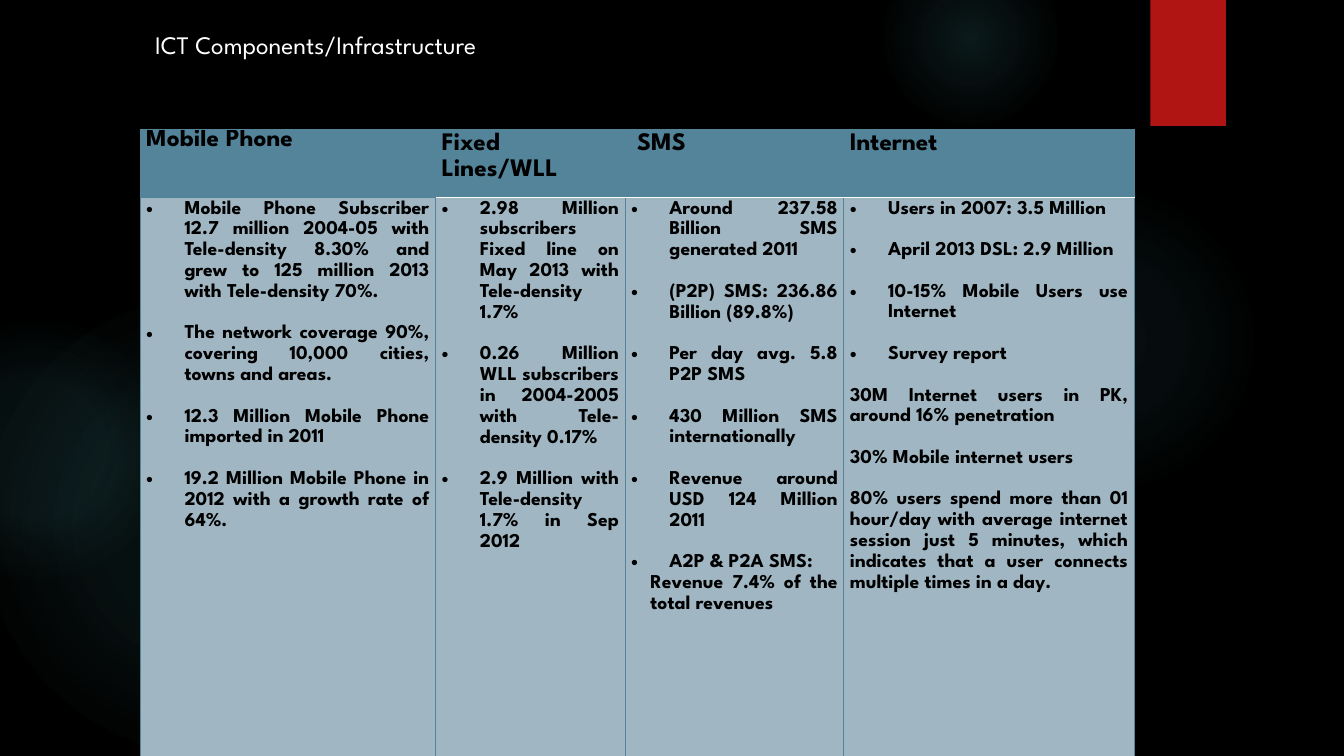
"""Builds the ICT components and infrastructure slide with its four-column table."""
from lxml.etree import SubElement
from pptx import Presentation
from pptx.dml.color import RGBColor
from pptx.enum.shapes import MSO_SHAPE
from pptx.enum.text import PP_ALIGN
from pptx.oxml import parse_xml
from pptx.oxml.ns import nsdecls, qn
from pptx.util import Inches, Pt

COLORS = {"black": "000000", "white": "FFFFFF", "red": "B01513",
          "glow": "50B9C1", "header": "54849A", "body": "A0B7C3"}
BULLET, INDENTED, PLAIN = "bullet", "indented", "plain"
GLOWS = [
    (-0.17, 2.92, 4.58, [(0, 10), (36, 8), (75, 0)]),
    (-0.92, 3.17, 2.58, [(0, 8), (36, 8), (72, 0)]),
    (9.41, 1.83, 3.08, [(0, 7), (36, 6), (69, 0)]),
    (8.75, -0.5, 1.75, [(0, 14), (36, 7), (73, 0)]),
    (9.41, 6.67, 1.08, [(0, 11), (30, 5), (67, 0)]),
]
COLUMNS = [
    ("Mobile Phone", 2.93, [
        (BULLET, "Mobile Phone Subscriber 12.7 million 2004-05 with Tele-density 8.30% "
                 "and grew to 125 million 2013 with Tele-density 70%."),
        (BULLET, "The network coverage 90%, covering 10,000 cities, towns and areas."),
        (BULLET, "12.3 Million Mobile Phone imported in 2011"),
        (BULLET, "19.2 Million Mobile Phone in 2012 with a growth rate of 64%."),
    ]),
    ("Fixed Lines/WLL", 1.88, [
        (BULLET, "2.98 Million subscribers Fixed line on May 2013 with Tele-density 1.7%"),
        (BULLET, "0.26 Million WLL subscribers in 2004-2005 with Tele-density 0.17%"),
        (BULLET, "2.9 Million with Tele-density 1.7% in Sep 2012"),
    ]),
    ("SMS", 2.17, [
        (BULLET, "Around 237.58 Billion SMS generated 2011"),
        (BULLET, "(P2P) SMS: 236.86 Billion (89.8%)"),
        (BULLET, "Per day avg. 5.8 P2P SMS"),
        (BULLET, "430 Million SMS internationally"),
        (BULLET, "Revenue around USD 124 Million 2011"),
        (BULLET, "A2P & P2A SMS:"),
        (INDENTED, "Revenue 7.4% of the total revenues"),
    ]),
    ("Internet", 2.88, [
        (BULLET, "Users in 2007: 3.5 Million"),
        (BULLET, "April 2013 DSL: 2.9 Million"),
        (BULLET, "10-15% Mobile Users use Internet"),
        (BULLET, "Survey report"),
        (PLAIN, "30M Internet users in PK, around 16% penetration"),
        (PLAIN, "30% Mobile internet users"),
        (PLAIN, "80% users spend more than 01 hour/day with average internet session just "
                "5 minutes, which indicates that a user connects multiple times in a day."),
    ]),
]


class SlideBuilder:
    def __init__(self, presentation, font="League Spartan"):
        self.font = font
        self.slide = presentation.slides.add_slide(presentation.slide_layouts[6])

    def color(self, name):
        return RGBColor.from_string(COLORS[name])

    def background(self, name):
        fill = self.slide.background.fill
        fill.solid()
        fill.fore_color.rgb = self.color(name)

    def shape(self, kind, left, top, width, height, fill):
        shape = self.slide.shapes.add_shape(
            kind, Inches(left), Inches(top), Inches(width), Inches(height))
        shape.shadow.inherit = False
        shape.line.fill.background()
        shape.fill.solid()
        shape.fill.fore_color.rgb = self.color(fill)
        return shape

    def glow(self, left, top, size, stops):
        shape = self.shape(MSO_SHAPE.OVAL, left, top, size, size, "glow")
        stop_xml = "".join(
            f'<a:gs pos="{position * 1000}"><a:srgbClr val="{COLORS["glow"]}">'
            f'<a:alpha val="{alpha * 1000}"/></a:srgbClr></a:gs>'
            for position, alpha in stops)
        gradient = parse_xml(
            f'<a:gradFill {nsdecls("a")}><a:gsLst>{stop_xml}</a:gsLst><a:path path="circle">'
            '<a:fillToRect l="50000" t="50000" r="50000" b="50000"/></a:path></a:gradFill>')
        properties = shape.element.spPr
        properties.replace(properties.find(qn("a:solidFill")), gradient)

    def style_runs(self, paragraph, size, color, bold=False):
        for run in paragraph.runs:
            run.font.name = self.font
            run.font.size = Pt(size)
            run.font.bold = bold
            run.font.color.rgb = self.color(color)

    def title(self, text, left, top, width, height):
        text_frame = self.slide.shapes.add_textbox(
            Inches(left), Inches(top), Inches(width), Inches(height)).text_frame
        text_frame.word_wrap = True
        text_frame.text = text
        self.style_runs(text_frame.paragraphs[0], 18, "white")

    def indent(self, paragraph, kind):
        properties = paragraph._p.get_or_add_pPr()
        margin = {BULLET: 0.38, INDENTED: 0.19, PLAIN: 0}[kind]
        properties.set("marL", str(Inches(margin)))
        properties.set("indent", str(-Inches(margin) if kind == BULLET else 0))
        if kind == BULLET:
            SubElement(properties, qn("a:buFont"), typeface="Arial")
            SubElement(properties, qn("a:buChar"), char="•")

    def cell(self, cell, fill, borders):
        cell.margin_left = cell.margin_right = Inches(0.06)
        cell.margin_top = cell.margin_bottom = 0
        properties = cell._tc.get_or_add_tcPr()
        for side in "LRTB":
            name, width = borders.get(side, ("header", 0.75))
            line = SubElement(properties, qn(f"a:ln{side}"), w=str(Pt(width)))
            line_fill = SubElement(line, qn("a:solidFill"))
            SubElement(line_fill, qn("a:srgbClr"), val=COLORS[name])
        cell.fill.solid()
        cell.fill.fore_color.rgb = self.color(fill)

    def header_cell(self, cell, text, first):
        self.cell(cell, "header", {} if first else {"B": ("white", 1.5)})
        cell.text_frame.text = text
        paragraph = cell.text_frame.paragraphs[0]
        if not first:
            paragraph.alignment = PP_ALIGN.JUSTIFY
            paragraph.line_spacing = 1.15
        if text == "SMS":
            paragraph._p.get_or_add_pPr().set("marL", str(Inches(0.06)))
        self.style_runs(paragraph, 18, "black", True)

    def body_cell(self, cell, items, column):
        borders = {} if column == 0 else {"T": ("white", 1.5)}
        if column < 2:
            borders["R" if column == 0 else "L"] = ("header", 1.5)
        self.cell(cell, "body", borders)
        cell.text_frame.text = "\n".join(text for kind, text in items)
        following = [kind for kind, text in items[1:]] + [INDENTED]
        for paragraph, (kind, text), next_kind in zip(
                cell.text_frame.paragraphs, items, following):
            paragraph.alignment = PP_ALIGN.JUSTIFY
            paragraph.line_spacing = 1.15
            paragraph.space_after = Pt(0 if next_kind == INDENTED else 14.8)
            self.indent(paragraph, kind)
            self.style_runs(paragraph, 14, "black", True)

    def table(self, columns, left, top, row_heights):
        width = sum(column_width for header, column_width, items in columns)
        table = self.slide.shapes.add_table(
            len(row_heights), len(columns), Inches(left), Inches(top),
            Inches(width), Inches(sum(row_heights))).table
        table.horz_banding = False
        for row, height in zip(table.rows, row_heights):
            row.height = Inches(height)
        for index, (header, column_width, items) in enumerate(columns):
            table.columns[index].width = Inches(column_width)
            self.header_cell(table.cell(0, index), header, index == 0)
            self.body_cell(table.cell(1, index), items, index)


def main():
    presentation = Presentation()
    presentation.slide_width = Inches(13.33)
    presentation.slide_height = Inches(7.5)
    builder = SlideBuilder(presentation)
    builder.background("black")
    for glow in GLOWS:
        builder.glow(*glow)
    builder.shape(MSO_SHAPE.RECTANGLE, 11.41, 0, 0.75, 1.25, "red")
    builder.table(COLUMNS, 1.39, 1.28, (0.68, 5.54))
    builder.title("ICT Components/Infrastructure", 1.44, 0.24, 7.96, 0.4)
    presentation.save("out.pptx")


if __name__ == "__main__":
    main()
